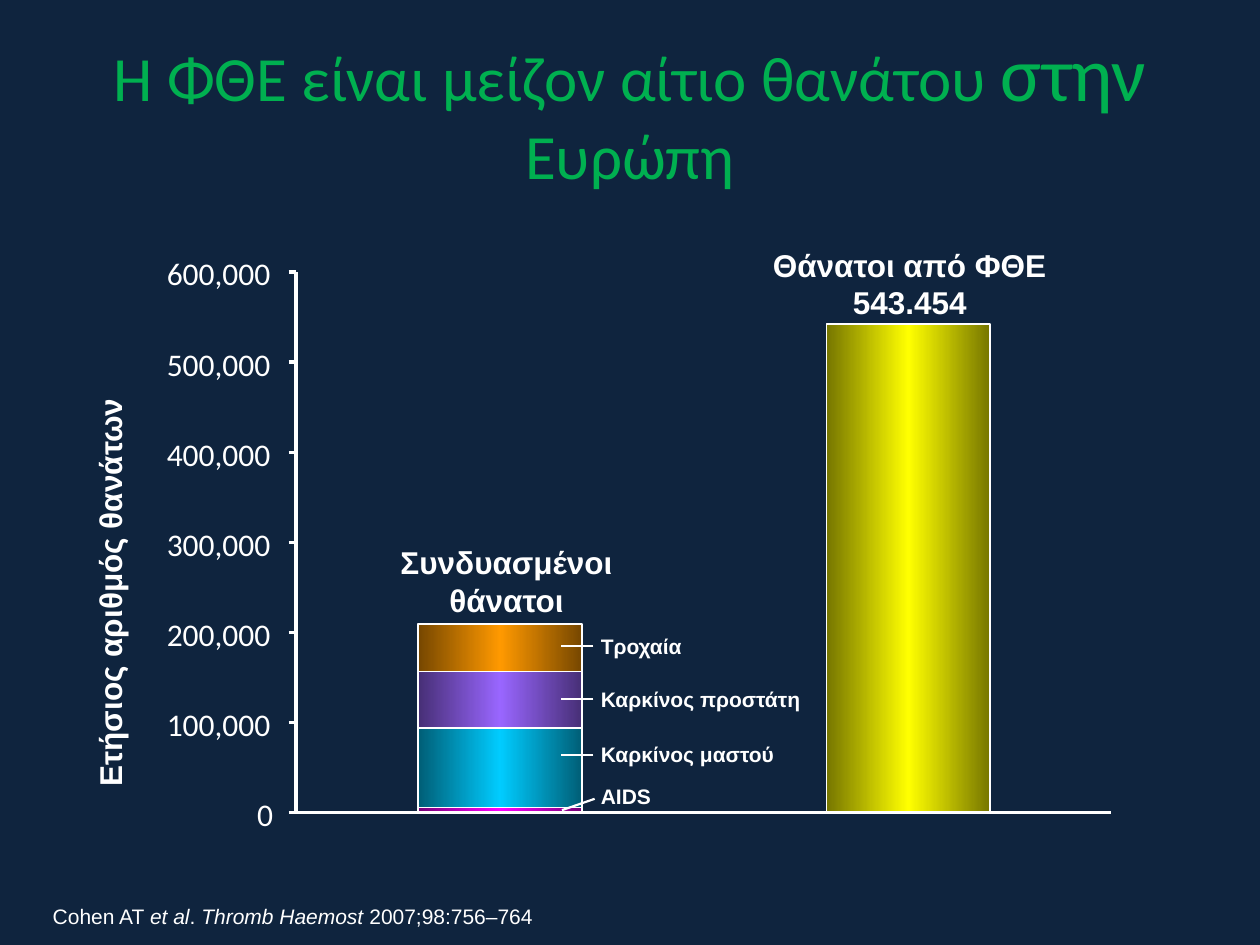
from copy import deepcopy
from typing import NamedTuple

from lxml import etree
from pptx import Presentation
from pptx import util as u
from pptx.dml.color import RGBColor
from pptx.enum import shapes, text
from pptx.oxml.ns import qn

COLOURS = {
    "background": "0F243E", "title": "00B050", "white": "FFFFFF",
    "pink": "FF00FF", "pink edge": "760076",
    "blue": "00CCFF", "blue edge": "005E76",
    "purple": "9966FF", "purple edge": "472F76",
    "orange": "FF9900", "orange edge": "764700",
    "yellow": "FFFF00", "yellow edge": "767600",
}
LEFT, CENTER = text.PP_ALIGN.LEFT, text.PP_ALIGN.CENTER
AXIS_X, AXIS_TOP, BASELINE, AXIS_END = 2.35, 2.16, 6.45, 8.82
TICK_COUNT, TICK_LENGTH, TICK_STEP = 7, 0.06, 100_000
BAR_WIDTH = 1.3


class Run(NamedTuple):
    content: str
    size: float
    font: str = "Arial"
    bold: bool = False
    italic: bool = False
    colour: str = "white"


class Box(NamedTuple):
    left: float
    top: float
    width: float
    height: float


class Segment(NamedTuple):
    """One cause of death in the stacked bar, with its label and leader line."""
    label: str
    colour: str
    top: float
    bottom: float
    label_top: float
    label_width: float
    leader: tuple[float, float, float, float]


SEGMENTS = [
    Segment("AIDS", "pink", 6.41, BASELINE, 6.17, 0.85, (4.72, 6.34, 4.46, 6.43)),
    Segment("Καρκίνος μαστού", "blue", 5.78, 6.41, 5.84, 1.66, (4.71, 5.99, 4.45, 5.99)),
    Segment("Καρκίνος προστάτη", "purple", 5.33, 5.78, 5.4, 1.89, (4.71, 5.55, 4.45, 5.55)),
    Segment("Τροχαία", "orange", 4.95, 5.33, 4.98, 1.97, (4.71, 5.13, 4.45, 5.13)),
]


def rgb(name: str) -> RGBColor:
    return RGBColor.from_string(COLOURS[name])


def add_text(slide, box: Box, lines: list[list[Run]], align=LEFT,
             anchor=text.MSO_ANCHOR.TOP, wrap: bool = True,
             inset: bool = True, grow: bool = True):
    """Add a text box; the lines are parted by line breaks in one paragraph."""
    shape = slide.shapes.add_textbox(*map(u.Inches, box))
    frame = shape.text_frame
    frame.word_wrap = wrap
    frame.vertical_anchor = anchor
    if grow:
        frame.auto_size = text.MSO_AUTO_SIZE.SHAPE_TO_FIT_TEXT
    if not inset:
        frame.margin_left = frame.margin_right = 0
        frame.margin_top = frame.margin_bottom = 0
    paragraph = frame.paragraphs[0]
    paragraph.alignment = align
    for index, line in enumerate(lines):
        if index:
            paragraph.add_line_break()
        for item in line:
            run = paragraph.add_run()
            run.text = item.content
            run.font.name = item.font
            run.font.size = u.Pt(item.size)
            run.font.bold = item.bold
            run.font.italic = item.italic
            run.font.color.rgb = rgb(item.colour)
    return shape


def add_line(slide, x1: float, y1: float, x2: float, y2: float, width: float = 0) -> None:
    line = slide.shapes.add_connector(
        shapes.MSO_CONNECTOR.STRAIGHT, *map(u.Inches, (x1, y1, x2, y2)))
    line.line.color.rgb = rgb("white")
    line.line.width = u.Pt(width)
    etree.SubElement(line._element.spPr, qn("a:effectLst"))


def add_bar(slide, left: float, top: float, bottom: float, colour: str) -> None:
    """Add a bar shaded from dark edges to a bright centre."""
    bar = slide.shapes.add_shape(
        shapes.MSO_SHAPE.RECTANGLE,
        *map(u.Inches, (left, top, BAR_WIDTH, bottom - top)))
    bar.shadow.inherit = False
    bar.line.color.rgb = rgb("white")
    bar.line.width = u.Pt(1)
    bar.fill.gradient()
    bar.fill.gradient_angle = 0
    stop_list = bar._element.spPr.find(".//" + qn("a:gsLst"))
    stop_list.append(deepcopy(stop_list[0]))
    edge = f"{colour} edge"
    for stop, position, name in zip(
            bar.fill.gradient_stops, (0, 0.5, 1), (edge, colour, edge)):
        stop.position = position
        stop.color.rgb = rgb(name)


def add_axes(slide) -> None:
    add_line(slide, AXIS_X, AXIS_TOP, AXIS_X, BASELINE)
    add_line(slide, AXIS_X, BASELINE, AXIS_END, BASELINE)
    gap = (BASELINE - AXIS_TOP) / (TICK_COUNT - 1)
    for index in range(TICK_COUNT):
        y = BASELINE - index * gap
        add_line(slide, AXIS_X - TICK_LENGTH, y, AXIS_X, y)
        left, width = (1.32, 0.83) if index else (2.04, 0.13)
        add_text(slide, Box(left, y - 0.14, width, 0.3),
                 [[Run(f"{index * TICK_STEP:,}", 18, "Calibri")]],
                 CENTER, wrap=False, inset=False)


def add_axis_title(slide) -> None:
    shape = add_text(slide, Box(0.67, 2.23, 0.5, 4.11),
                     [[Run("Ετήσιος αριθμός θανάτων ", 18, bold=True)]], CENTER)
    shape.rotation = 180
    shape._element.txBody.bodyPr.set("vert", "eaVert")


def main() -> None:
    presentation = Presentation()
    presentation.slide_width, presentation.slide_height = u.Inches(10), u.Inches(7.5)
    slide = presentation.slides.add_slide(presentation.slide_layouts[6])
    slide.background.fill.solid()
    slide.background.fill.fore_color.rgb = rgb("background")

    add_text(slide, Box(0, 0.44, 10, 0.84), [[
        Run("Η ΦΘΕ είναι μείζον αίτιο θανάτου ", 36, "Calibri", colour="title"),
        Run("στην", 44, "Calibri", colour="title"),
        Run(" Ευρώπη", 36, "Calibri", colour="title"),
    ]], CENTER, text.MSO_ANCHOR.MIDDLE, grow=False)
    add_text(slide, Box(0.32, 7.11, 9.05, 0.31), [[
        Run("Cohen AT ", 12), Run("et al", 12, italic=True), Run(". ", 12),
        Run("Thromb Haemost", 12, italic=True), Run(" 2007;98:756–764", 12),
    ]], anchor=text.MSO_ANCHOR.BOTTOM)

    add_text(slide, Box(2.7, 4.26, 2.64, 0.7),
             [[Run("Συνδυασμένοι θάνατοι", 18, bold=True)]], CENTER)
    add_text(slide, Box(5.5, 1.9, 3.44, 0.7),
             [[Run("Θάνατοι από ΦΘΕ", 18, bold=True)],
              [Run("543.454", 18, bold=True)]], CENTER)
    add_axis_title(slide)

    for segment in SEGMENTS:
        add_bar(slide, 3.32, segment.top, segment.bottom, segment.colour)
    add_bar(slide, 6.56, 2.57, BASELINE, "yellow")
    add_axes(slide)
    for segment in SEGMENTS:
        add_text(slide, Box(4.67, segment.label_top, segment.label_width, 0.3),
                 [[Run(segment.label, 12, bold=True)]])
        add_line(slide, *segment.leader, width=1.25)

    presentation.save("out.pptx")


if __name__ == "__main__":
    main()
